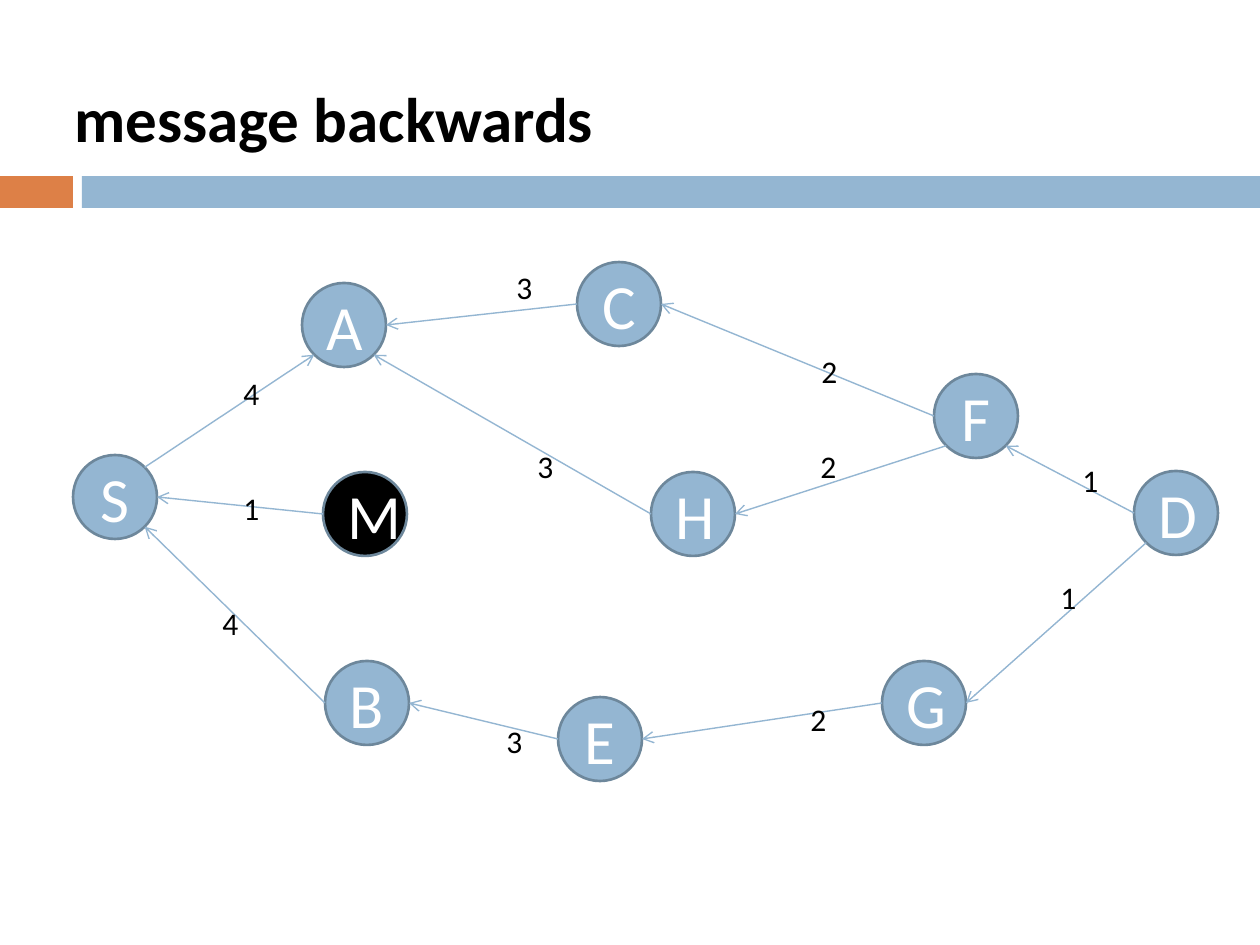
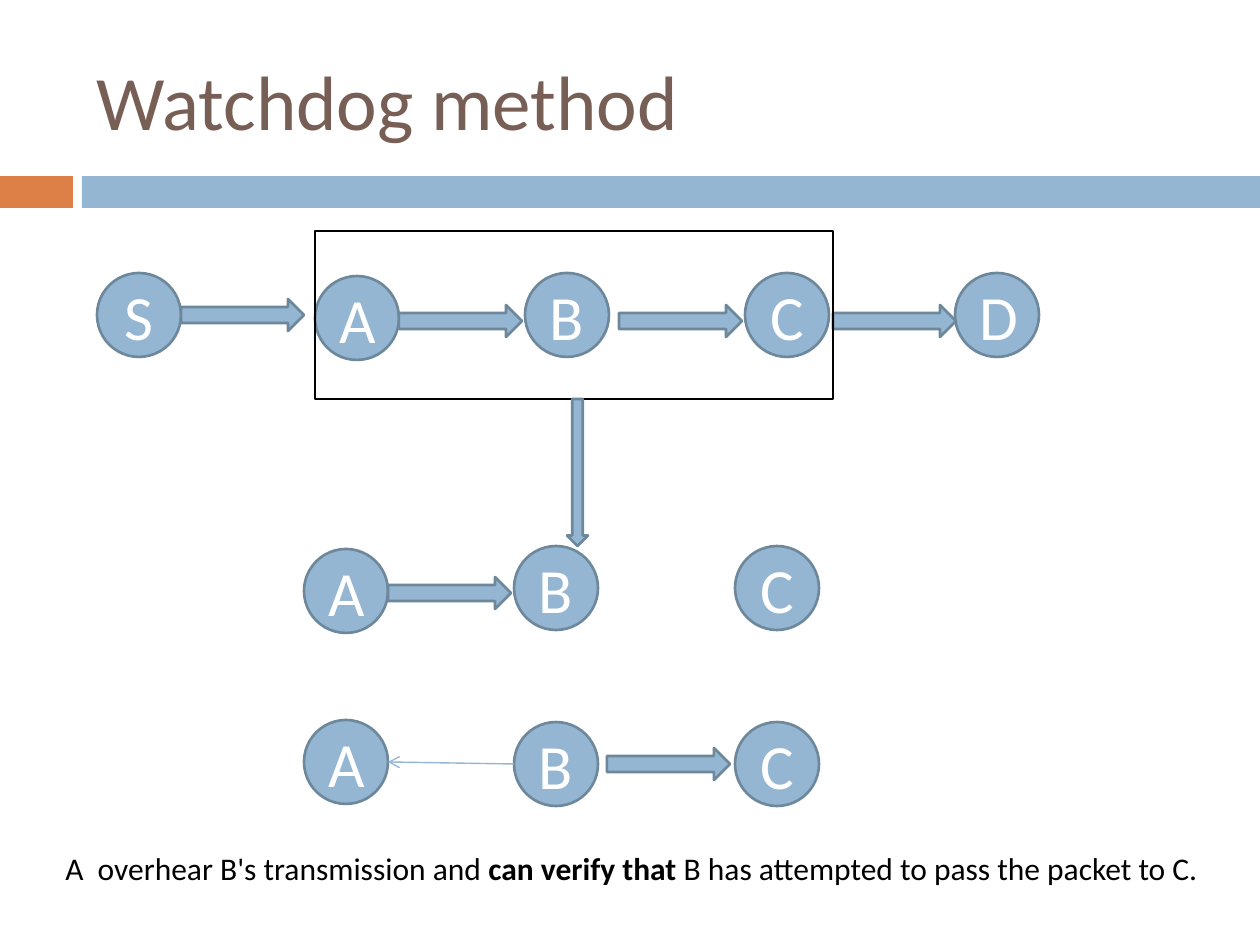
from dataclasses import dataclass
from math import sqrt

from lxml import etree
from pptx import Presentation
from pptx.dml.color import RGBColor
from pptx.enum import shapes, text
from pptx.oxml import ns
from pptx.util import Emu, Pt

EMU_PER_PX = 914400 / 126


@dataclass(frozen=True)
class Theme:
    font: str = "Calibri"
    orange: str = "DD8047"
    blue: str = "94B6D2"
    outline: str = "6D879B"
    brown: str = "775F55"
    black: str = "000000"
    white: str = "FFFFFF"
    title_size: int = 44
    heading_size: int = 36
    node_size: int = 36
    text_size: int = 18
    outline_width: float = 1.5
    edge_width: float = 0.79
    node_diameter: int = 84


def px(*lengths):
    return [Emu(round(length * EMU_PER_PX)) for length in lengths]


def rgb(color):
    return RGBColor.from_string(color)


class Deck:
    SITES = {
        "left": (-1, 0),
        "right": (1, 0),
        "upper right": (sqrt(0.5), -sqrt(0.5)),
        "lower left": (-sqrt(0.5), sqrt(0.5)),
        "lower right": (sqrt(0.5), sqrt(0.5)),
    }

    def __init__(self, theme):
        self.theme = theme
        self.presentation = Presentation()
        self.presentation.slide_width, self.presentation.slide_height = px(1260, 945)
        self.slide = None

    def add_slide(self):
        layout = self.presentation.slide_layouts.get_by_name("Title Only")
        self.slide = self.presentation.slides.add_slide(layout)
        rectangle = shapes.MSO_SHAPE.RECTANGLE
        self.add_shape(rectangle, (0, 176, 73, 32), self.theme.orange)
        self.add_shape(rectangle, (82, 176, 1178, 32), self.theme.blue)

    def format_run(self, run, size, color, bold=False):
        run.font.name = self.theme.font
        run.font.size = Pt(size)
        run.font.bold = bold
        run.font.color.rgb = rgb(color)

    def add_title(self, title, box, size, color, bold=False, anchor=text.MSO_ANCHOR.MIDDLE):
        shape = self.slide.shapes.title
        shape.left, shape.top, shape.width, shape.height = px(*box)
        frame = shape.text_frame
        frame.text = title
        frame.auto_size = text.MSO_AUTO_SIZE.NONE
        frame.vertical_anchor = anchor
        paragraph = frame.paragraphs[0]
        paragraph.alignment = text.PP_ALIGN.LEFT
        self.format_run(paragraph.runs[0], size, color, bold)

    def add_shape(self, kind, box, fill=None, line=None):
        shape = self.slide.shapes.add_shape(kind, *px(*box))
        shape.shadow.inherit = False
        if fill:
            shape.fill.solid()
            shape.fill.fore_color.rgb = rgb(fill)
        else:
            shape.fill.background()
        if line:
            shape.line.color.rgb = rgb(line)
            shape.line.width = Pt(self.theme.outline_width)
        else:
            shape.line.fill.background()
        return shape

    def add_node(self, letter, left, top, fill=None):
        diameter = self.theme.node_diameter
        box = (left, top, diameter, diameter)
        shape = self.add_shape(shapes.MSO_SHAPE.OVAL, box, fill or self.theme.blue, self.theme.outline)
        shape.text_frame.text = letter
        paragraph = shape.text_frame.paragraphs[0]
        paragraph.alignment = text.PP_ALIGN.CENTER
        self.format_run(paragraph.runs[0], self.theme.node_size, self.theme.white)

    def add_block_arrow(self, kind, box):
        self.add_shape(kind, box, self.theme.blue, self.theme.outline)

    def find_site(self, node, site):
        radius = self.theme.node_diameter / 2
        across, down = self.SITES[site]
        return node[0] + radius * (1 + across), node[1] + radius * (1 + down)

    def add_edge(self, source, source_site, target, target_site):
        start = self.find_site(source, source_site)
        end = self.find_site(target, target_site)
        connector = self.slide.shapes.add_connector(shapes.MSO_CONNECTOR.STRAIGHT, *px(*start, *end))
        connector.line.color.rgb = rgb(self.theme.blue)
        connector.line.width = Pt(self.theme.edge_width)
        properties = connector.element.spPr
        line = properties.find(ns.qn("a:ln"))
        etree.SubElement(line, ns.qn("a:tailEnd"), type="arrow")
        etree.SubElement(properties, ns.qn("a:effectLst"))

    def add_text(self, parts, box, wrap=False):
        frame = self.slide.shapes.add_textbox(*px(*box)).text_frame
        frame.word_wrap = wrap
        for words, bold in parts:
            run = frame.paragraphs[0].add_run()
            run.text = words
            self.format_run(run, self.theme.text_size, self.theme.black, bold)


def build_message_backwards(deck):
    theme = deck.theme
    deck.add_slide()
    deck.add_title("message backwards", (62, 73, 564, 89), theme.heading_size,
                   theme.black, bold=True, anchor=text.MSO_ANCHOR.TOP)
    nodes = {
        "S": (73, 455), "E": (558, 697), "G": (882, 661), "D": (1134, 471), "F": (934, 374),
        "H": (651, 472), "C": (577, 262), "B": (325, 661), "M": (323, 472), "A": (302, 283),
    }
    for letter, place in nodes.items():
        deck.add_node(letter, *place, fill=theme.black if letter == "M" else None)
    edges = [
        ("S", "upper right", "A", "lower left"),
        ("M", "left", "S", "right"),
        ("B", "left", "S", "lower right"),
        ("C", "left", "A", "right"),
        ("F", "left", "C", "right"),
        ("H", "left", "A", "lower right"),
        ("F", "lower left", "H", "right"),
        ("E", "left", "B", "right"),
        ("G", "left", "E", "right"),
        ("D", "lower left", "G", "right"),
        ("D", "left", "F", "lower right"),
    ]
    for source, source_site, target, target_site in edges:
        deck.add_edge(nodes[source], source_site, nodes[target], target_site)
    hop_labels = {
        "1": [(1070, 455), (1048, 572), (231, 483)],
        "2": [(808, 441), (809, 346), (798, 694)],
        "3": [(525, 441), (504, 262), (494, 716)],
        "4": [(231, 368), (210, 598)],
    }
    for hops, places in hop_labels.items():
        for place in places:
            deck.add_text([(hops, False)], (*place, 43, 50))


def build_watchdog_method(deck):
    theme = deck.theme
    deck.add_slide()
    deck.add_title("Watchdog method", (84, 32, 1124, 136), theme.title_size, theme.brown)
    route = {"S": (97, 273), "A": (315, 276), "B": (525, 273), "C": (745, 273), "D": (955, 273)}
    sending = {"A": (304, 549), "B": (514, 546), "C": (735, 546)}
    overhearing = {"A": (304, 720), "B": (514, 722), "C": (735, 722)}
    for row in (route, sending, overhearing):
        for letter, place in row.items():
            deck.add_node(letter, *place)
    for place in [(181, 299), (399, 305), (619, 305), (833, 305), (388, 577), (607, 748)]:
        deck.add_block_arrow(shapes.MSO_SHAPE.RIGHT_ARROW, (*place, 123, 32))
    deck.add_shape(shapes.MSO_SHAPE.RECTANGLE, (315, 231, 518, 168), line=theme.black)
    deck.add_block_arrow(shapes.MSO_SHAPE.DOWN_ARROW, (567, 399, 21, 147))
    deck.add_edge(overhearing["B"], "left", overhearing["A"], "right")
    caption = [
        ("A  overhear B's transmission and ", False),
        ("can verify that ", True),
        ("B has attempted to pass the packet to C.", False),
    ]
    deck.add_text(caption, (53, 843, 1187, 50), wrap=True)


def main():
    deck = Deck(Theme())
    build_message_backwards(deck)
    build_watchdog_method(deck)
    deck.presentation.save("out.pptx")


if __name__ == "__main__":
    main()
